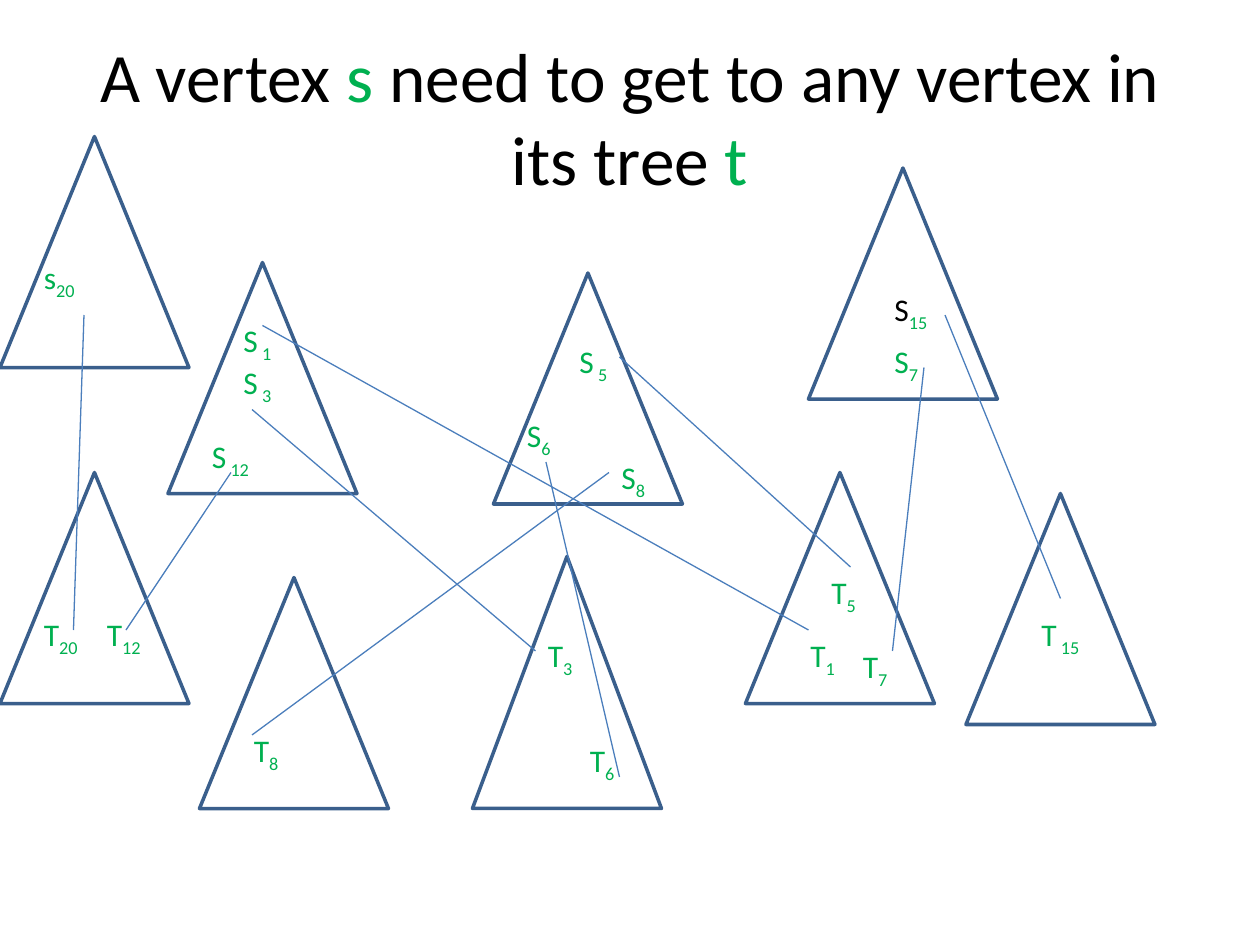
from dataclasses import dataclass

from lxml.etree import SubElement
from pptx import Presentation
from pptx.dml.color import RGBColor as RGB
from pptx.enum.shapes import MSO_CONNECTOR as CONN, MSO_SHAPE as SHAPE
from pptx.enum.text import MSO_ANCHOR as ANCHOR, MSO_AUTO_SIZE as FIT, PP_ALIGN as ALIGN
from pptx.oxml.ns import qn
from pptx.util import Inches, Pt


@dataclass(frozen=True)
class Theme:
    font: str = "Calibri"
    title_size: float = 39.6
    label_size: float = 18
    ink: RGB = RGB(0x00, 0x00, 0x00)
    green: RGB = RGB(0x00, 0xB0, 0x50)
    outline: RGB = RGB(0x3A, 0x5F, 0x8C)
    link: RGB = RGB(0x4B, 0x7E, 0xBC)
    outline_width: float = 2
    link_width: float = 0.75


class Board:
    """A slide on a grid of 120 columns by 90 rows."""
    COLS, ROWS = 120, 90

    def __init__(self, prs, theme):
        self.theme = theme
        self.s = prs.slides.add_slide(prs.slide_layouts[5])
        self.col = prs.slide_width / self.COLS
        self.row = prs.slide_height / self.ROWS

    def at(self, x, y):
        return round(x * self.col), round(y * self.row)

    def run(self, p, text, size, color, subscript=False):
        r = p.add_run()
        r.text = text
        r.font.name = self.theme.font
        r.font.size = Pt(size)
        r.font.color.rgb = color
        if subscript:
            r.font._element.set("baseline", "-25000")

    def title(self, x, y, w, h, parts):
        sp = self.s.shapes.title
        sp.left, sp.top = self.at(x, y)
        sp.width, sp.height = self.at(w, h)
        tf = sp.text_frame
        tf.word_wrap = True
        tf.auto_size = FIT.NONE
        tf.vertical_anchor = ANCHOR.MIDDLE
        p = tf.paragraphs[0]
        p.alignment = ALIGN.CENTER
        for text, color in parts:
            self.run(p, text, self.theme.title_size, color)

    def tree(self, x, y, w=18, h=22):
        sp = self.s.shapes.add_shape(
            SHAPE.ISOSCELES_TRIANGLE, *self.at(x, y), *self.at(w, h))
        sp.shadow.inherit = False
        sp.fill.background()
        sp.line.color.rgb = self.theme.outline
        sp.line.width = Pt(self.theme.outline_width)

    def vertex(self, x, y, w, h, letter, index, color=None):
        sp = self.s.shapes.add_textbox(*self.at(x, y), *self.at(w, h))
        tf = sp.text_frame
        tf.word_wrap = True
        tf.auto_size = FIT.SHAPE_TO_FIT_TEXT
        p = tf.paragraphs[0]
        self.run(p, letter, self.theme.label_size, color or self.theme.green)
        self.run(p, index, self.theme.label_size, self.theme.green, subscript=True)

    def link(self, x1, y1, x2, y2):
        sp = self.s.shapes.add_connector(
            CONN.STRAIGHT, *self.at(x1, y1), *self.at(x2, y2))
        sp.line.color.rgb = self.theme.link
        sp.line.width = Pt(self.theme.link_width)
        SubElement(sp._element.spPr, qn("a:effectLst"))


# Left, top of each tree, all of the default size
TREES = [(16, 25), (47, 26), (77, 16), (19, 55), (71, 45), (0, 45), (0, 13), (92, 47)]

# Left, top, width, letter, index
SOURCES = [
    (22, 30, 10, "S", " 1"), (22, 34, 10, "S", " 3"),
    (54, 32, 10, "S", " 5"), (19, 41, 10, "S", " 12"),
]
VERTICES = [
    (49, 39, 28, "S", "6"), (84, 32, 36, "S", "7"),
    (58, 43, 24, "S", "8"), (3, 24, 34, "s", "20"),
    (76, 60, 23, "T", "1"), (51, 60, 35, "T", "3"),
    (78, 54, 33, "T", "5"), (55, 70, 32, "T", "6"),
    (81, 61, 26, "T", "7"), (23, 69, 45, "T", "8"),
    (9, 58, 39, "T", "12"), (98, 58, 22, "T", " 15"), (3, 58, 32, "T", "20"),
]

# From each s to its t
LINKS = [
    (25, 31, 77, 60), (24, 39, 51, 62), (59, 34, 81, 54),
    (52, 44, 59, 74), (88, 35, 85, 62), (58, 45, 24, 70),
    (22, 45, 12, 60), (90, 30, 101, 57), (8, 30, 7, 60),
]


def main():
    prs = Presentation()
    prs.slide_width, prs.slide_height = Inches(10), Inches(7.5)
    theme = Theme()
    board = Board(prs, theme)

    # Title
    board.title(6, 3.6, 108, 15, [
        ("A vertex ", theme.ink), ("s", theme.green),
        (" need to get to any vertex in its tree ", theme.ink), ("t", theme.green),
    ])

    # Trees
    for x, y in TREES:
        board.tree(x, y)
    board.tree(45, 53, h=24)

    # Vertex labels
    for x, y, w, letter, index in SOURCES:
        board.vertex(x, y, w, 8.5, letter, index)
    for x, y, w, letter, index in VERTICES:
        board.vertex(x, y, w, 4.8, letter, index)
    board.vertex(84, 27, 28, 4.8, "S", "15", theme.ink)

    # Links
    for ends in LINKS:
        board.link(*ends)

    prs.save("out.pptx")


if __name__ == "__main__":
    main()
